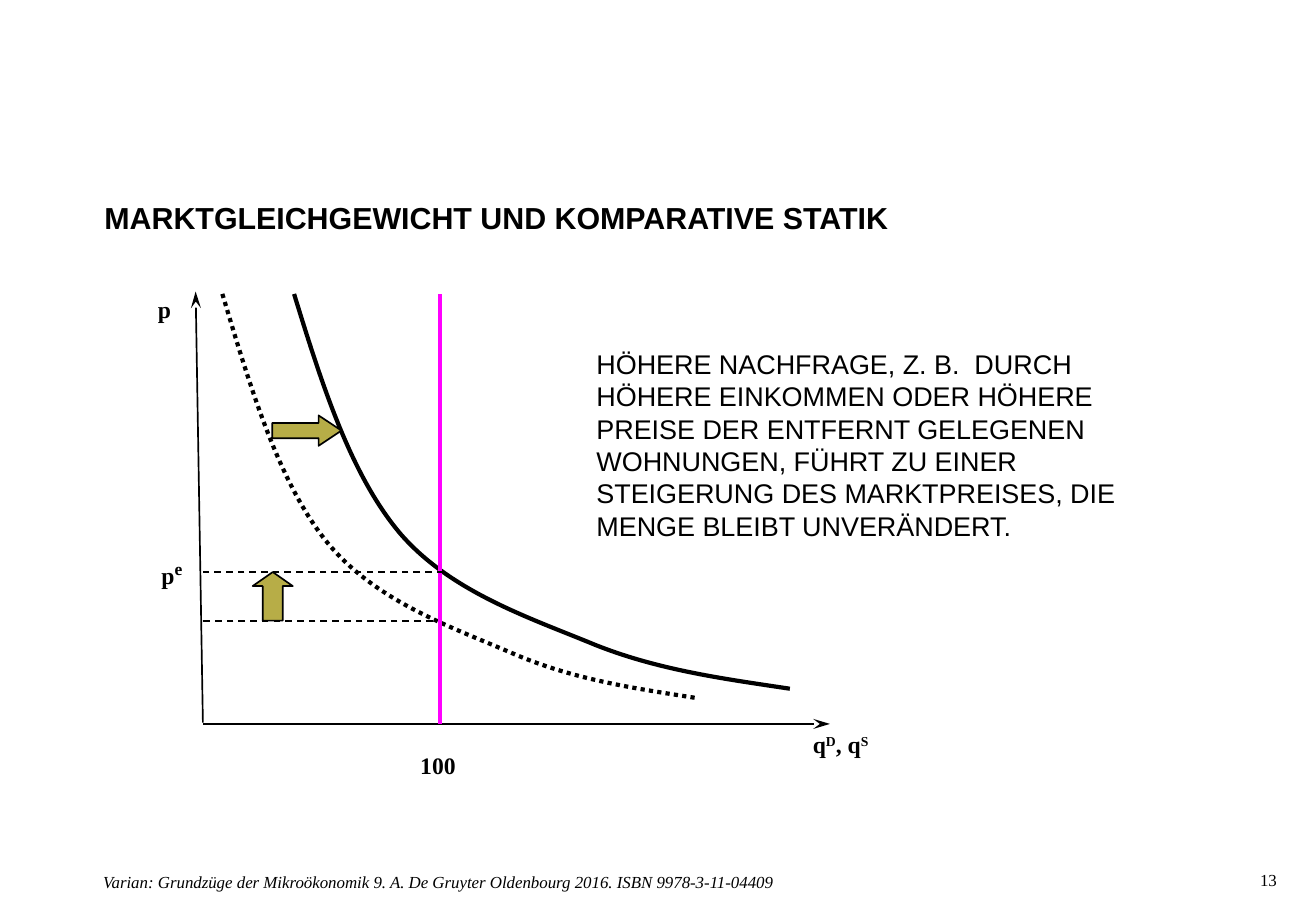
import pptx
import pptx.util
import pptx.dml.color
import pptx.enum.dml
import pptx.enum.shapes
import pptx.oxml
import pptx.oxml.ns
from pptx.util import Inches

COLORS = {"ink": "000000", "supply": "FF00FF", "arrow": "B7AD47"}
SERIF, SANS = "Times New Roman", "Arial"
DASH = pptx.enum.dml.MSO_LINE_DASH_STYLE
SHAPE = pptx.enum.shapes.MSO_SHAPE
NO_EFFECTS = "<a:effectLst %s/>" % pptx.oxml.ns.nsdecls("a")
STEALTH = '<a:headEnd %s type="stealth" w="med" len="lg"/>' % pptx.oxml.ns.nsdecls("a")


class MarketSlide:
    def __init__(self, prs):
        self.slide = prs.slides.add_slide(prs.slide_layouts[6])
        self.shapes = self.slide.shapes

    def color(self, name):
        return pptx.dml.color.RGBColor.from_string(COLORS[name])

    def text(self, box, parts, size, font=SERIF, bold=False, italic=False,
             margins=None, wrap=True):
        """Parts are (text, superscript size or None) pairs."""
        frame = self.shapes.add_textbox(*map(Inches, box)).text_frame
        frame.word_wrap = wrap
        if margins is not None:
            (frame.margin_left, frame.margin_top,
             frame.margin_right, frame.margin_bottom) = map(Inches, margins)
        paragraph = frame.paragraphs[0]
        style = paragraph.font
        style.name, style.size = font, pptx.util.Pt(size)
        style.bold, style.italic = bold, italic
        style.color.rgb = self.color("ink")
        for words, raised in parts:
            run = paragraph.add_run()
            run.text = words
            if raised:
                if raised != size:
                    run.font.size = pptx.util.Pt(raised)
                run.font._element.set("baseline", "30000")

    def stroke(self, line, color="ink", width=1, dash=None):
        line.color.rgb = self.color(color)
        line.width = pptx.util.Pt(width)
        if dash:
            line.dash_style = dash

    def line(self, start, end, color="ink", width=1, dash=None, stealth=False):
        connector = self.shapes.add_connector(
            pptx.enum.shapes.MSO_CONNECTOR.STRAIGHT, *map(Inches, start + end))
        self.stroke(connector.line, color, width, dash)
        if stealth:
            connector.line._get_or_add_ln().append(pptx.oxml.parse_xml(STEALTH))
        connector._element.spPr.append(pptx.oxml.parse_xml(NO_EFFECTS))

    def curve(self, points, dash=None):
        """Start point, then three Bezier points for each section."""
        start, *others = [(Inches(x), Inches(y)) for x, y in points]
        builder = self.shapes.build_freeform(*start)
        builder.add_line_segments(others, close=False)
        curve = builder.convert_to_shape()
        curve.shadow.inherit = False
        curve.fill.background()
        self.stroke(curve.line, width=2.5, dash=dash)
        # Turn each three straight segments into one cubic section
        outline = curve._element.find(".//" + pptx.oxml.ns.qn("a:path"))
        segments = outline.findall(pptx.oxml.ns.qn("a:lnTo"))
        for first in range(0, len(segments), 3):
            section = outline.makeelement(pptx.oxml.ns.qn("a:cubicBezTo"), {})
            outline.append(section)
            for segment in segments[first:first + 3]:
                section.append(segment[0])
                outline.remove(segment)

    def block_arrow(self, kind, box, adjustments):
        arrow = self.shapes.add_shape(kind, *map(Inches, box))
        arrow.shadow.inherit = False
        for index, value in enumerate(adjustments):
            arrow.adjustments[index] = value
        arrow.fill.solid()
        arrow.fill.fore_color.rgb = self.color("arrow")
        self.stroke(arrow.line)


def main():
    prs = pptx.Presentation()
    prs.slide_width, prs.slide_height = Inches(10.83), Inches(7.5)
    market = MarketSlide(prs)

    # Title, page number and source
    market.text((0.86, 1.64, 9.51, 0.54),
                [("MARKTGLEICHGEWICHT UND KOMPARATIVE STATIK", None)],
                18, SANS, bold=True, margins=(0, 0, 0.16, 0))
    market.text((10.37, 7.16, 0.39, 0.2), [("13", None)], 10, margins=(0, 0, 0, 0))
    market.text((0.85, 7.18, 9.4, 0.2),
                [("Varian: Grundzüge der Mikroökonomik 9. A. De Gruyter Oldenbourg "
                  "2016. ISBN 9978-3-11-04409", None)],
                10, italic=True, margins=(0, 0, 0, 0))

    # Axes, with the arrowhead at the first point
    axis_x, axis_y = 1.67, 5.96
    market.line((1.61, 2.4), (axis_x, 5.95), stealth=True)
    market.line((6.83, axis_y), (axis_x, axis_y), stealth=True)

    # Old and new demand, fixed supply
    market.curve([(1.83, 2.42), (2.06, 3.19), (2.29, 3.96), (2.68, 4.45),
                  (3.08, 4.95), (3.71, 5.16), (4.22, 5.38),
                  (4.73, 5.6), (5.24, 5.67), (5.75, 5.75)], DASH.ROUND_DOT)
    market.curve([(2.42, 2.42), (2.65, 3.17), (2.89, 3.92), (3.3, 4.4),
                  (3.72, 4.88), (4.37, 5.09), (4.9, 5.31),
                  (5.43, 5.52), (5.97, 5.59), (6.5, 5.67)])
    market.line((3.62, axis_y), (3.62, 2.42), "supply", 2.5)

    # Shift of demand and rise of the price
    old_price, new_price = 5.11, 4.71
    market.block_arrow(SHAPE.RIGHT_ARROW, (2.24, 3.42, 0.57, 0.25), (0.5, 0.75))
    market.line((3.56, old_price), (axis_x, old_price), dash=DASH.DASH)
    market.line((3.65, new_price), (axis_x, new_price), dash=DASH.DASH)
    market.block_arrow(SHAPE.UP_ARROW,
                       (2.08, new_price, 0.33, old_price - new_price), (0.5, 0.35))

    # Axis labels
    for box, parts in [
        ((1.2, 2.38, 0.31, 0.34), [("p", None)]),
        ((6.59, 5.96, 0.69, 0.34), [("q", None), ("D", 14), (", q", None), ("S", 14)]),
        ((1.23, 4.51, 0.39, 0.4), [("p", None), ("e", 18)]),
        ((3.36, 6.13, 0.58, 0.34), [("100", None)]),
    ]:
        market.text(box, parts, 14, bold=True, wrap=False)

    # Explanation
    market.text((4.81, 2.81, 4.65, 1.72),
                [("HÖHERE NACHFRAGE, Z. B.  DURCH HÖHERE EINKOMMEN ODER HÖHERE PREISE "
                  "DER ENTFERNT GELEGENEN WOHNUNGEN, FÜHRT ZU EINER STEIGERUNG DES "
                  "MARKTPREISES, DIE MENGE BLEIBT UNVERÄNDERT.", None)],
                16, SANS)

    prs.save("out.pptx")


if __name__ == "__main__":
    main()
